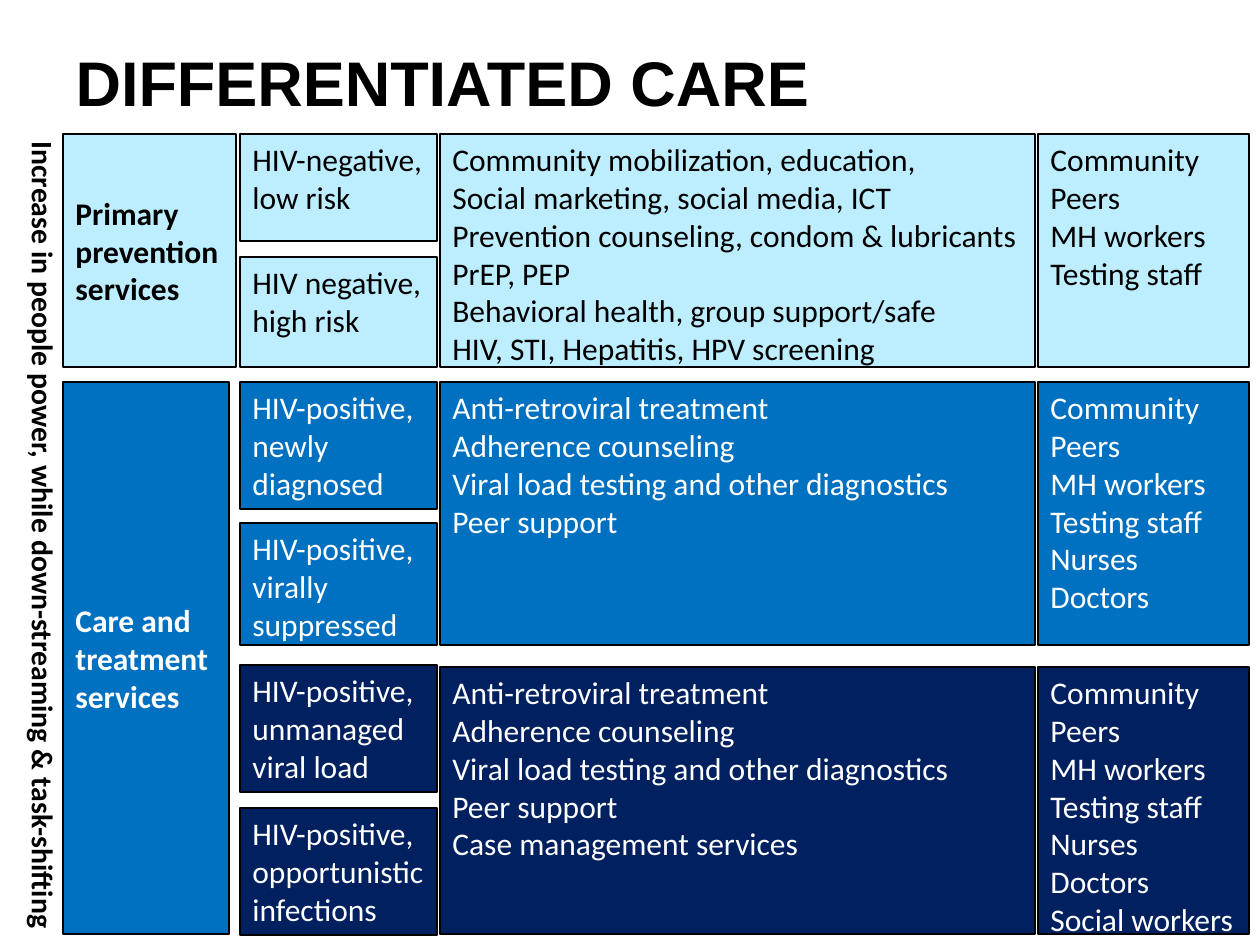
from pptx import Presentation
from pptx.dml.color import RGBColor
from pptx.enum.shapes import MSO_SHAPE
from pptx.enum.text import MSO_ANCHOR, MSO_AUTO_SIZE, PP_ALIGN
from pptx.util import Emu, Pt

EMU_PER_PX = 914400 / 126
BLACK, WHITE = "000000", "FFFFFF"
PALE, BLUE, NAVY = "BDEEFF", "0070C0", "002060"

TITLE = "DIFFERENTIATED CARE"
SIDE_NOTE = "Increase in people power, while down-streaming & task-shifting"

# Column: left, width
STATUS_COLUMN = (240, 197)
SERVICES_COLUMN = (440, 595)
STAFF_COLUMN = (1038, 211)

STAFF = ["Community", "Peers", "MH workers", "Testing staff",
         "Nurses", "Doctors", "Social workers"]
TREATMENT = ["Anti-retroviral treatment", "Adherence counseling",
             "Viral load testing and other diagnostics", "Peer support"]

# Label: text, box, fill, text colour
LABELS = [
    ("Primary prevention services", (63, 134, 173, 233), PALE, BLACK),
    ("Care and treatment services", (63, 382, 166, 552), BLUE, WHITE),
]

# Status: text, top, height
BANDS = [
    {"top": 134, "height": 233, "fill": PALE, "color": BLACK,
     "statuses": [("HIV-negative, low risk", 134, 107),
                  ("HIV negative, high risk", 257, 110)],
     "services": ["Community mobilization, education,",
                  "Social marketing, social media, ICT",
                  "Prevention counseling, condom & lubricants",
                  "PrEP, PEP",
                  "Behavioral health, group support/safe",
                  "HIV, STI, Hepatitis, HPV screening"],
     "staff": STAFF[:4]},
    {"top": 382, "height": 263, "fill": BLUE, "color": WHITE,
     "statuses": [("HIV-positive, newly diagnosed", 382, 127),
                  ("HIV-positive, virally suppressed", 523, 122)],
     "services": TREATMENT,
     "staff": STAFF[:6]},
    {"top": 667, "height": 267, "fill": NAVY, "color": WHITE,
     "statuses": [("HIV-positive, unmanaged viral load", 665, 127),
                  ("HIV-positive, opportunistic infections", 808, 127)],
     "services": TREATMENT + ["Case management services"],
     "staff": STAFF},
]


def px(*lengths):
    return [Emu(round(length * EMU_PER_PX)) for length in lengths]


def rgb(color):
    return RGBColor.from_string(color)


def write(text_frame, lines, color, size=18, bold=False, font="Calibri"):
    for index, line in enumerate(lines):
        paragraph = text_frame.paragraphs[0] if index == 0 else text_frame.add_paragraph()
        paragraph.alignment = PP_ALIGN.LEFT
        run = paragraph.add_run()
        run.text = line
        run.font.name = font
        run.font.size = Pt(size)
        run.font.bold = bold
        run.font.color.rgb = rgb(color)


def add_card(slide, box, lines, fill, color, anchor=MSO_ANCHOR.TOP, bold=False):
    card = slide.shapes.add_shape(MSO_SHAPE.RECTANGLE, *px(*box))
    card.shadow.inherit = False
    card.fill.solid()
    card.fill.fore_color.rgb = rgb(fill)
    card.line.color.rgb = rgb(BLACK)
    card.line.width = Pt(0.75)
    card.text_frame.word_wrap = True
    card.text_frame.vertical_anchor = anchor
    write(card.text_frame, lines, color, bold=bold)


def add_band(slide, band):
    colors = band["fill"], band["color"]
    left, width = STATUS_COLUMN
    for text, top, height in band["statuses"]:
        add_card(slide, (left, top, width, height), [text], *colors)
    for (left, width), key in ((SERVICES_COLUMN, "services"), (STAFF_COLUMN, "staff")):
        add_card(slide, (left, band["top"], width, band["height"]), band[key], *colors)


def add_title(slide):
    title = slide.shapes.title
    title.left, title.top, title.width, title.height = px(63, 3, 1134, 157)
    title.text_frame.vertical_anchor = MSO_ANCHOR.MIDDLE
    write(title.text_frame, [TITLE], BLACK, size=36, bold=True, font="Arial")


def add_side_note(slide):
    note = slide.shapes.add_textbox(*px(6, 129, 62, 829))
    text_frame = note.text_frame
    text_frame.word_wrap = True
    text_frame.auto_size = MSO_AUTO_SIZE.SHAPE_TO_FIT_TEXT
    text_frame._txBody.bodyPr.set("vert", "vert")
    write(text_frame, [SIDE_NOTE], BLACK, size=17, bold=True)


def main():
    presentation = Presentation()
    presentation.slide_width, presentation.slide_height = px(1260, 945)
    slide = presentation.slides.add_slide(presentation.slide_layouts[5])
    add_title(slide)
    for text, box, fill, color in LABELS:
        add_card(slide, box, [text], fill, color, MSO_ANCHOR.MIDDLE, bold=True)
    for band in BANDS:
        add_band(slide, band)
    add_side_note(slide)
    presentation.save("out.pptx")


if __name__ == "__main__":
    main()
